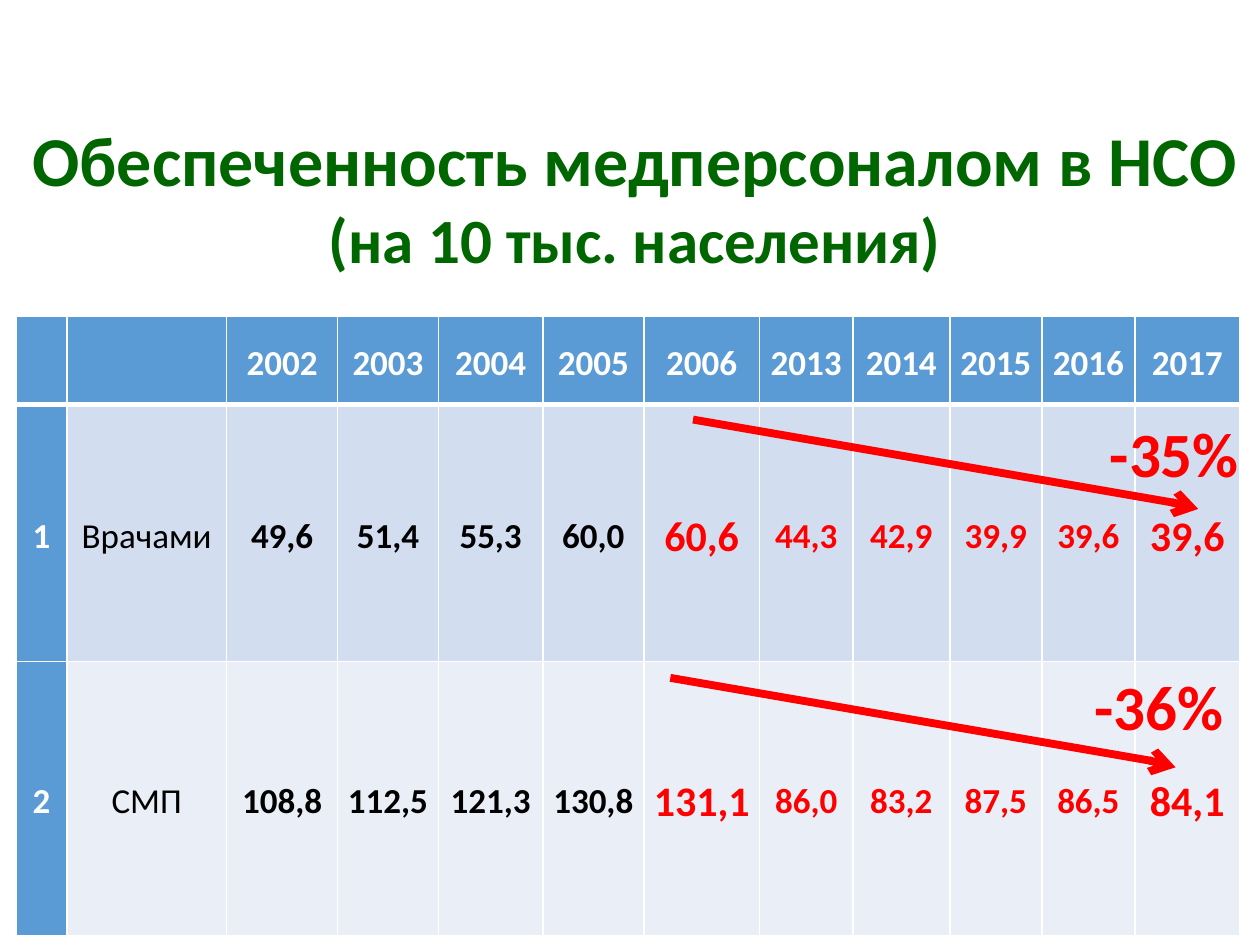
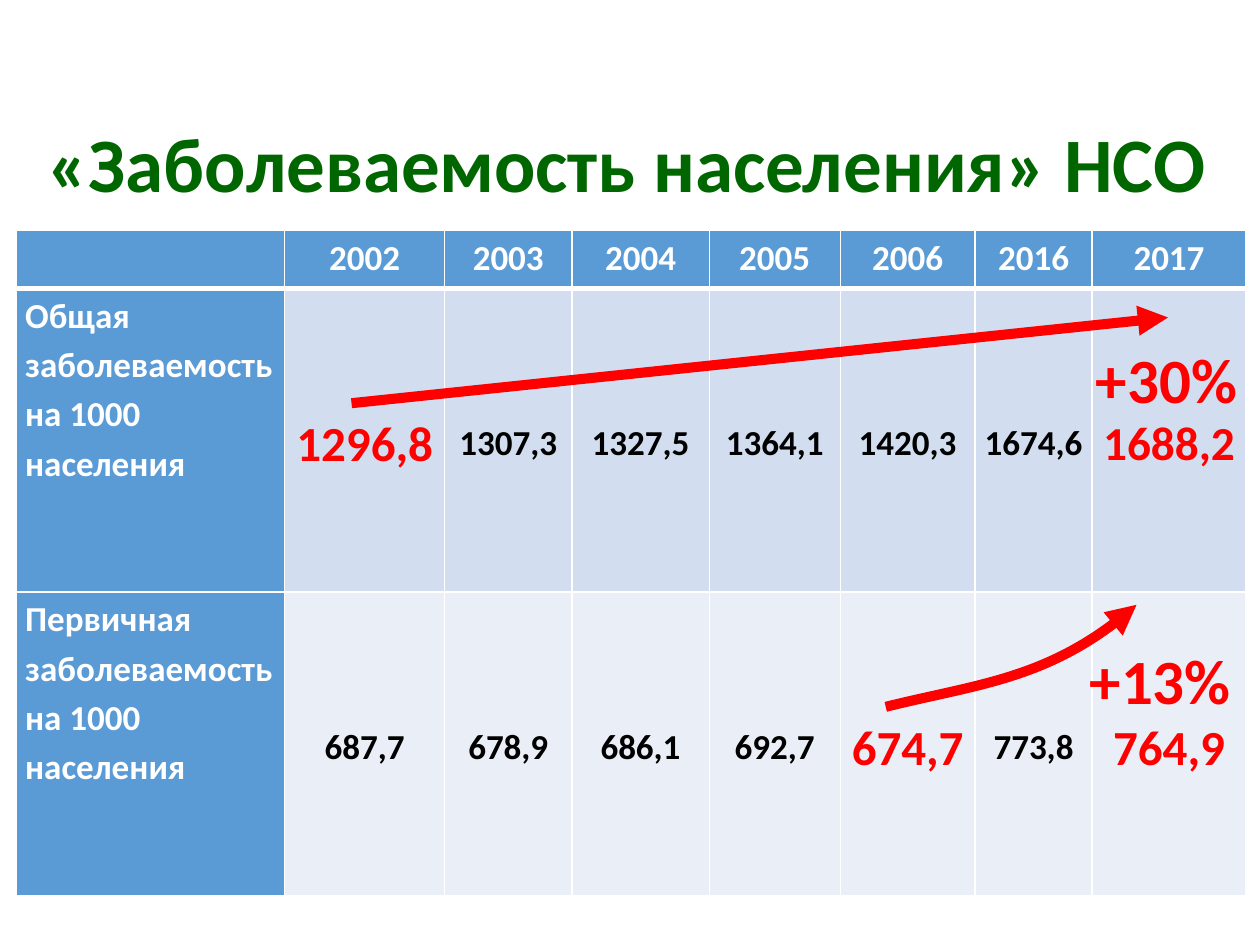
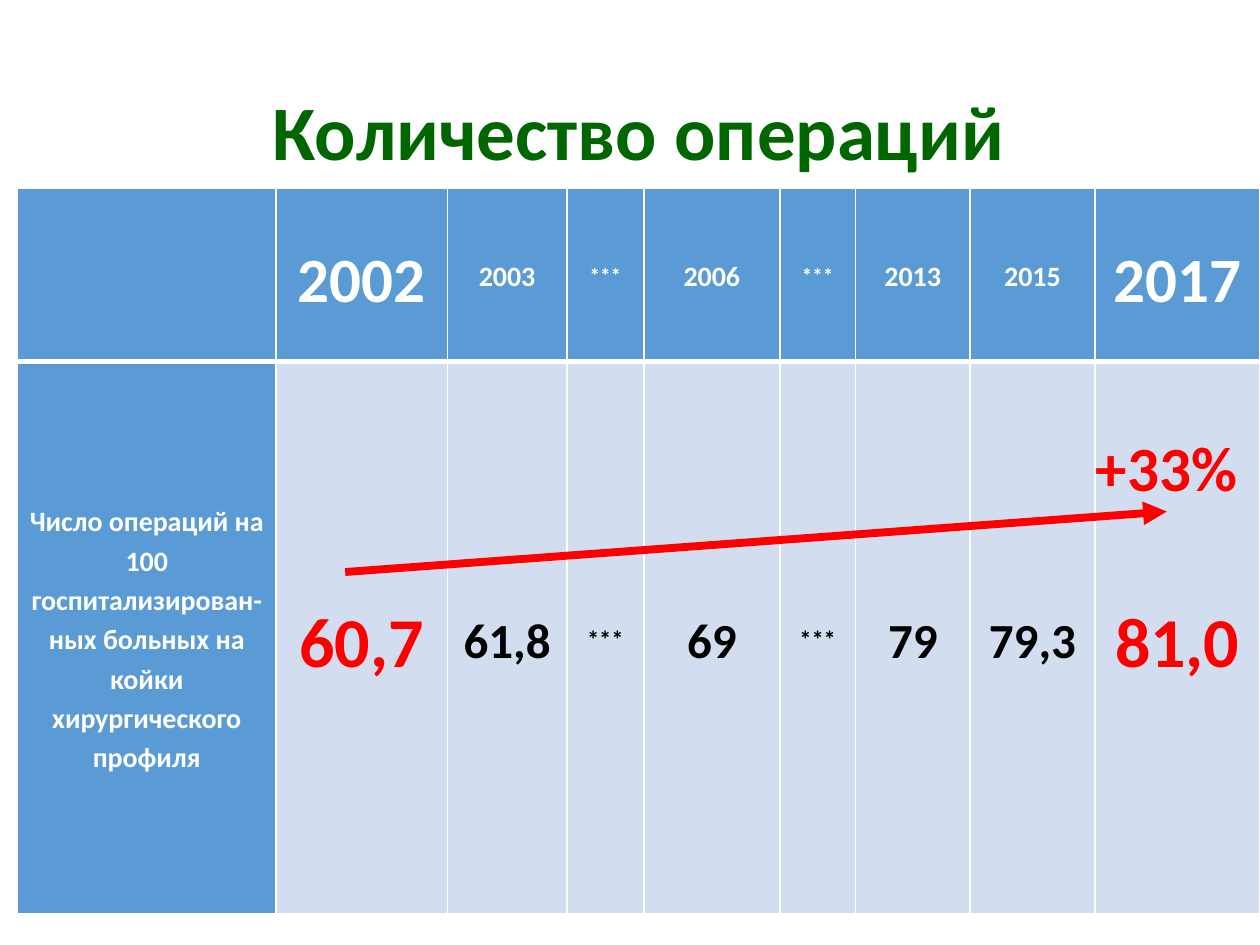
from lxml.etree import SubElement
from pptx import Presentation
from pptx.dml.color import RGBColor
from pptx.enum.shapes import MSO_CONNECTOR
from pptx.enum.text import MSO_ANCHOR, MSO_AUTO_SIZE, PP_ALIGN
from pptx.oxml.ns import qn
from pptx.util import Inches, Pt

FONT = "Calibri"
COLORS = {
    "title": "006600",
    "accent": "FF0000",
    "header": "5B9BD5",
    "odd_row": "D2DEEF",
    "even_row": "EAEFF7",
    "white": "FFFFFF",
    "black": "000000",
}


def red(text, size):
    return {"text": text, "size": size, "color": "accent"}


def plain(text):
    return {"text": text, "bold": False}


def sized(text, size):
    return {"text": text, "size": size}


SLIDES = [
    {
        "title": [("Обеспеченность медперсоналом в НСО", 40), ("(на 10 тыс. населения)", 36)],
        "title_box": (0.13, 0.87, 9.82, 1.38),
        "table": {
            "origin": (0.13, 2.51),
            "columns": [0.4, 1.27, 0.88, 0.8, 0.83, 0.8, 0.92, 0.74, 0.77, 0.73, 0.74, 0.83],
            "heights": [0.7, 2.04, 2.18],
            "body_size": 20,
            "rows": [
                ["", "", "2002", "2003", "2004", "2005", "2006",
                 "2013", "2014", "2015", "2016", "2017"],
                ["1", plain("Врачами"), "49,6", "51,4", "55,3", "60,0", red("60,6", 24),
                 red("44,3", 20), red("42,9", 20), red("39,9", 20), red("39,6", 20), red("39,6", 24)],
                ["2", plain("СМП"), "108,8", "112,5", "121,3", "130,8", red("131,1", 24),
                 red("86,0", 20), red("83,2", 20), red("87,5", 20), red("86,5", 20), red("84,1", 24)],
            ],
        },
        "arrows": [
            {"points": [(5.5, 3.33), (9.43, 4.01), (9.51, 4.04)], "width": 4.5, "head": "arrow"},
            {"points": [(5.32, 5.38), (9.26, 6.06), (9.33, 6.09)], "width": 4.5, "head": "arrow"},
        ],
        "changes": [("-35%", 8.71, 3.24, 1.24), ("-36%", 8.59, 5.25, 1.24)],
    },
    {
        "title": [("«Заболеваемость населения» НСО", 44)],
        "title_box": (0.02, 0.86, 9.92, 0.84),
        "table": {
            "origin": (0.13, 1.83),
            "columns": [2.13, 1.27, 1.01, 1.09, 1.04, 1.07, 0.93, 1.22],
            "heights": [0.46, 2.41, 2.41],
            "body_size": 20,
            "header_anchor": MSO_ANCHOR.TOP,
            "label_anchor": MSO_ANCHOR.TOP,
            "label_align": PP_ALIGN.LEFT,
            "rows": [
                ["", "2002", "2003", "2004", "2005", "2006", "2016", "2017"],
                ["Общая заболеваемость на 1000 населения", red("1296,8", 28), "1307,3",
                 "1327,5", "1364,1", "1420,3", "1674,6", red("1688,2", 27)],
                ["Первичная заболеваемость на 1000 населения", "687,7", "678,9",
                 "686,1", "692,7", red("674,7", 28), "773,8", red("764,9", 28)],
            ],
        },
        "arrows": [
            {"points": [(2.79, 3.2), (9.27, 2.52)], "width": 5.75, "head": "triangle"},
            {"points": [(7.03, 5.61), (7.71, 5.44), (8.36, 5.39), (9.02, 4.8)],
             "width": 5.75, "head": "triangle", "curved": True},
        ],
        "changes": [("+30%", 8.6, 2.65, 1.33), ("+13%", 8.55, 5.04, 1.33)],
    },
    {
        "title": [("Количество операций", 44)],
        "title_box": (1.97, 0.61, 6.2, 0.84),
        "table": {
            "origin": (0.14, 1.49),
            "columns": [2.05, 1.36, 0.95, 0.61, 1.08, 0.6, 0.91, 0.99, 1.31],
            "heights": [1.38, 4.38],
            "header_size": 16,
            "body_size": 28,
            "rows": [
                ["", sized("2002", 36), "2003", sized("***", 12), "2006",
                 sized("***", 12), "2013", "2015", sized("2017", 36)],
                ["Число операций на 100\nгоспитализирован-ных больных на койки хирургического профиля",
                 red("60,7", 40), "61,8", sized("***", 14), "69",
                 sized("***", 14), "79", "79,3", red("81,0", 40)],
            ],
        },
        "arrows": [{"points": [(2.74, 4.54), (9.26, 4.06)], "width": 4.5, "head": "triangle"}],
        "changes": [("+33%", 8.6, 3.35, 1.33)],
    },
]


def rgb(name):
    return RGBColor.from_string(COLORS[name])


def add_run(paragraph, text, size, color, bold=True):
    run = paragraph.add_run()
    run.text = text
    run.font.name = FONT
    run.font.size = Pt(size)
    run.font.bold = bold
    run.font.color.rgb = rgb(color)


def write_paragraphs(text_frame, lines, color, align, bold=True, spacing=None):
    for index, (text, size) in enumerate(lines):
        paragraph = text_frame.add_paragraph() if index else text_frame.paragraphs[0]
        paragraph.alignment = align
        if spacing:
            paragraph.line_spacing = spacing
        add_run(paragraph, text, size, color, bold)


def set_title(slide, lines, box):
    title = slide.shapes.title
    title.left, title.top, title.width, title.height = map(Inches, box)
    text_frame = title.text_frame
    text_frame.word_wrap = True
    text_frame.auto_size = MSO_AUTO_SIZE.NONE
    text_frame.vertical_anchor = MSO_ANCHOR.MIDDLE
    write_paragraphs(text_frame, lines, "title", PP_ALIGN.CENTER)


def set_borders(cell, row_index):
    properties = cell._tc.get_or_add_tcPr()
    widths = {
        "a:lnL": 1,
        "a:lnR": 1,
        "a:lnT": 3 if row_index == 1 else 1,
        "a:lnB": 3 if row_index == 0 else 1,
    }
    for tag, width in widths.items():
        line = SubElement(properties, qn(tag), w=str(Pt(width)))
        fill = SubElement(line, qn("a:solidFill"))
        SubElement(fill, qn("a:srgbClr"), val=COLORS["white"])


def format_cell(cell, content, row_index, column_index, table_data):
    is_header = row_index == 0
    is_label = column_index == 0 and not is_header
    if isinstance(content, str):
        content = {"text": content}
    size = table_data["body_size"]
    anchor = MSO_ANCHOR.MIDDLE
    align = PP_ALIGN.CENTER
    if is_header:
        size = table_data.get("header_size", size)
        anchor = table_data.get("header_anchor", anchor)
    elif is_label:
        size = table_data.get("header_size", size)
        anchor = table_data.get("label_anchor", anchor)
        align = table_data.get("label_align", align)

    on_header_fill = is_header or is_label
    set_borders(cell, row_index)
    cell.fill.solid()
    body_fill = "odd_row" if row_index % 2 else "even_row"
    cell.fill.fore_color.rgb = rgb("header" if on_header_fill else body_fill)
    cell.margin_left = cell.margin_right = Inches(0.07)
    cell.margin_top = cell.margin_bottom = 0
    cell.vertical_anchor = anchor
    if content["text"]:
        lines = [(text, content.get("size", size)) for text in content["text"].split("\n")]
        color = content.get("color", "white" if on_header_fill else "black")
        write_paragraphs(cell.text_frame, lines, color, align, content.get("bold", True), 1.15)


def add_data_table(slide, table_data):
    columns, heights = table_data["columns"], table_data["heights"]
    left, top = table_data["origin"]
    table = slide.shapes.add_table(
        len(heights), len(columns), Inches(left), Inches(top),
        Inches(sum(columns)), Inches(sum(heights)),
    ).table
    table.horz_banding = False
    for column, width in zip(table.columns, columns):
        column.width = Inches(width)
    for row, height in zip(table.rows, heights):
        row.height = Inches(height)
    for row_index, row in enumerate(table_data["rows"]):
        for column_index, content in enumerate(row):
            cell = table.cell(row_index, column_index)
            format_cell(cell, content, row_index, column_index, table_data)


def bend_segments(shape):
    path_element = next(shape._element.iter(qn("a:path")))
    segments = path_element.findall(qn("a:lnTo"))
    curve = SubElement(path_element, qn("a:cubicBezTo"))
    for segment in segments:
        curve.append(segment[0])
        path_element.remove(segment)


def add_arrow(slide, points, width, head, curved=False):
    points = [(Inches(x), Inches(y)) for x, y in points]
    if len(points) == 2:
        shape = slide.shapes.add_connector(MSO_CONNECTOR.STRAIGHT, *points[0], *points[1])
    else:
        builder = slide.shapes.build_freeform(*points[0])
        builder.add_line_segments(points[1:], close=False)
        shape = builder.convert_to_shape()
        shape.fill.background()
        if curved:
            bend_segments(shape)
    shape.line.color.rgb = rgb("accent")
    shape.line.width = Pt(width)
    properties = shape._element.spPr
    SubElement(properties.find(qn("a:ln")), qn("a:tailEnd"), type=head)
    SubElement(properties, qn("a:effectLst"))


def add_change_label(slide, text, left, top, width):
    box = slide.shapes.add_textbox(Inches(left), Inches(top), Inches(width), Inches(0.71))
    box.text_frame.word_wrap = False
    write_paragraphs(box.text_frame, [(text, 36)], "accent", PP_ALIGN.LEFT)


def main():
    presentation = Presentation()
    presentation.slide_width = Inches(10)
    presentation.slide_height = Inches(7.5)
    title_only = presentation.slide_layouts.get_by_name("Title Only")
    for content in SLIDES:
        slide = presentation.slides.add_slide(title_only)
        set_title(slide, content["title"], content["title_box"])
        add_data_table(slide, content["table"])
        for arrow in content["arrows"]:
            add_arrow(slide, **arrow)
        for change in content["changes"]:
            add_change_label(slide, *change)
    presentation.save("out.pptx")


if __name__ == "__main__":
    main()
